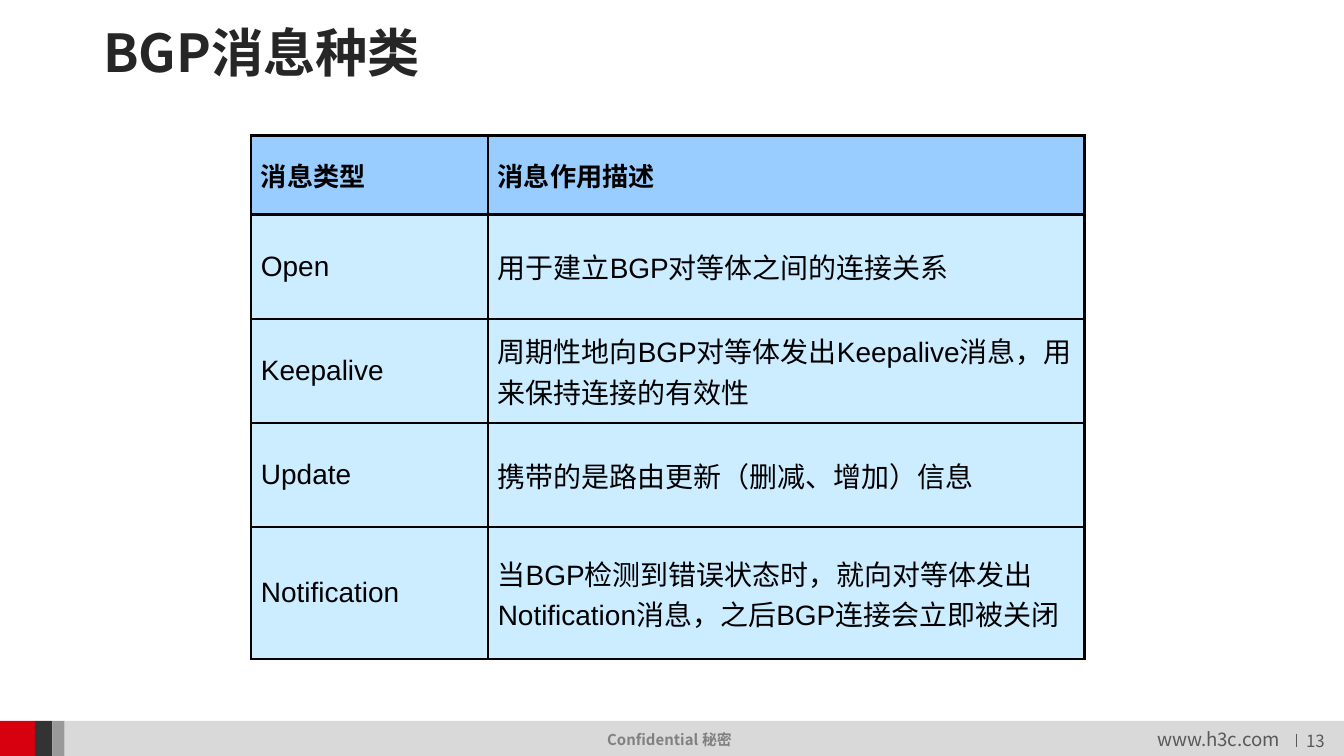
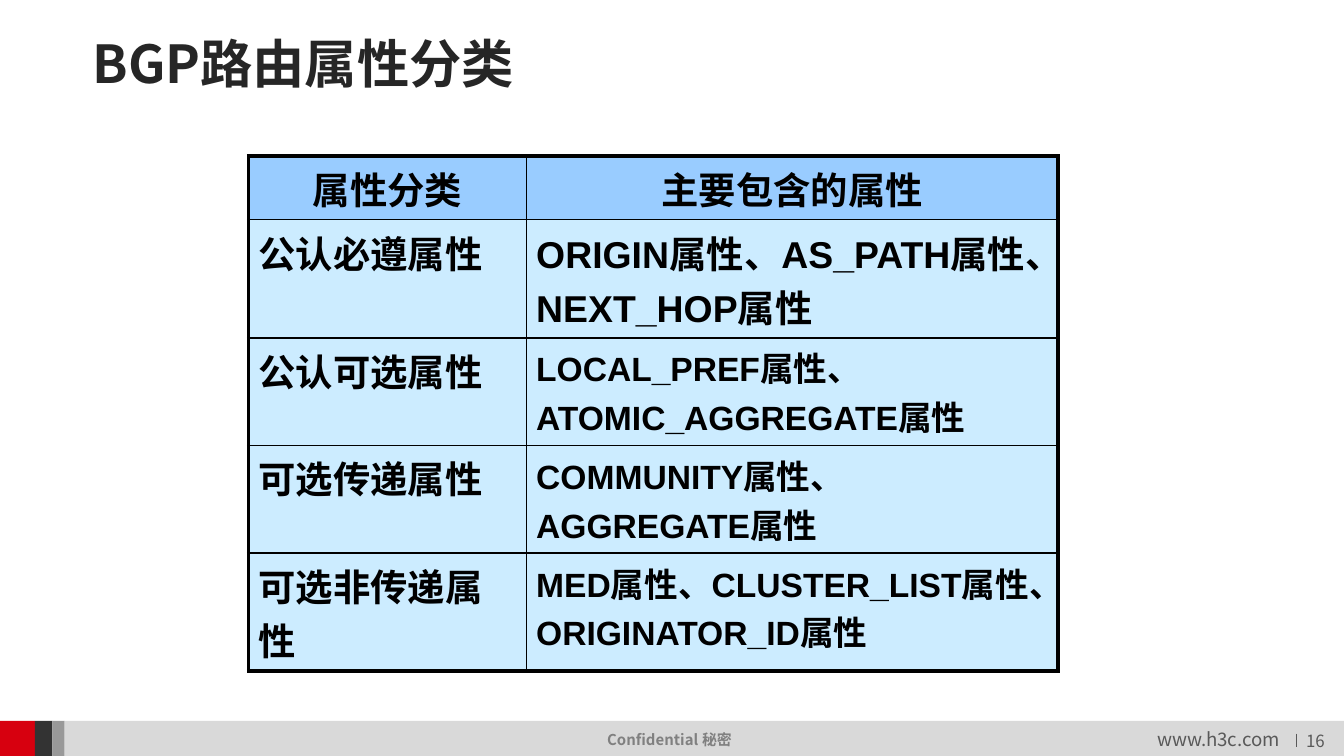
from dataclasses import dataclass

from lxml import etree
from pptx import Presentation
from pptx.dml.color import RGBColor
from pptx.enum.shapes import MSO_CONNECTOR, MSO_SHAPE
from pptx.enum.text import MSO_ANCHOR, MSO_AUTO_SIZE, PP_ALIGN
from pptx.oxml.ns import qn
from pptx.util import Pt

LEFT, CENTER, RIGHT = PP_ALIGN.LEFT, PP_ALIGN.CENTER, PP_ALIGN.RIGHT
TOP, MIDDLE = MSO_ANCHOR.TOP, MSO_ANCHOR.MIDDLE
FIT, FIXED = MSO_AUTO_SIZE.SHAPE_TO_FIT_TEXT, MSO_AUTO_SIZE.NONE
RECT, STRAIGHT = MSO_SHAPE.RECTANGLE, MSO_CONNECTOR.STRAIGHT

CJK_FONT = "Noto Sans CJK SC"
TABLE_FONT = "Arial"
COLORS = {
    "title": "262626", "text": "000000", "footer": "595959", "muted": "808080",
    "red": "D7000F", "dark": "333333", "mid": "999999", "light": "D9D9D9",
    "header": "99CCFF", "body": "CCECFF",
}
SLIDE_W, SLIDE_H = 720, 405
BAND_Y = 386.2


@dataclass
class Band:
    x: float
    right: float
    color: str


@dataclass
class TableSpec:
    x: float
    y: float
    cols: list[float]
    heights: list[float]
    rows: list[tuple[str, str]]
    header_size: float
    sizes: list[tuple[float, float]]  # one pair per body row
    header_align: PP_ALIGN
    body_bold: bool
    anchor: MSO_ANCHOR
    outer: float  # border widths
    inner: float


@dataclass
class Page:
    title: str
    title_x: float
    title_y: float
    number: str
    table: TableSpec


BANDS = [
    Band(0, 18.7, "red"),
    Band(18.7, 28.1, "dark"),
    Band(28.1, 34.6, "mid"),
    Band(34.6, SLIDE_W, "light"),
]

# Row heights leave room for every wrapped line
PAGES = [
    Page("BGP消息种类", 48.2, 9.8, "13", TableSpec(
        x=134.6, y=72.6, cols=[126.9, 319.5],
        heights=[42.4] + [55.8] * 3 + [70.8],
        rows=[
            ("消息类型", "消息作用描述"),
            ("Open", "用于建立BGP对等体之间的连接关系"),
            ("Keepalive", "周期性地向BGP对等体发出Keepalive消息，用来保持连接的有效性"),
            ("Update", "携带的是路由更新（删减、增加）信息"),
            ("Notification", "当BGP检测到错误状态时，就向对等体发出Notification消息，"
                             "之后BGP连接会立即被关闭"),
        ],
        header_size=14, sizes=[(15, 15)] * 4, header_align=LEFT,
        body_bold=False, anchor=MIDDLE, outer=1.5, inner=1.5)),
    Page("BGP路由属性分类", 42.5, 15.3, "16", TableSpec(
        x=133.2, y=83.7, cols=[148.9, 284.8],
        heights=[33.9, 63.4, 57.6, 57.6, 63.4],
        rows=[
            ("属性分类", "主要包含的属性"),
            ("公认必遵属性", "ORIGIN属性、AS_PATH属性、NEXT_HOP属性"),
            ("公认可选属性", "LOCAL_PREF属性、ATOMIC_AGGREGATE属性"),
            ("可选传递属性", "COMMUNITY属性、AGGREGATE属性"),
            ("可选非传递属性", "MED属性、CLUSTER_LIST属性、ORIGINATOR_ID属性"),
        ],
        header_size=20, sizes=[(20, 20)] + [(20, 18)] * 3, header_align=CENTER,
        body_bold=True, anchor=TOP, outer=2.25, inner=1)),
]


def rgb(name: str) -> RGBColor:
    return RGBColor.from_string(COLORS[name])


def write(tf, text: str, *, size: float, color: str, font: str = CJK_FONT,
          bold: bool = False, align: PP_ALIGN = LEFT) -> None:
    """Put one formatted paragraph in a text frame."""
    p = tf.paragraphs[0]
    p.alignment = align
    r = p.add_run()
    r.text = text
    r.font.size, r.font.bold, r.font.name = Pt(size), bold, font
    r.font.color.rgb = rgb(color)
    ea = etree.SubElement(r.font._element, qn("a:ea"))
    ea.set("typeface", CJK_FONT)


def add_label(slide, text: str, x: float, y: float, w: float, h: float, *,
              wrap: bool = False, top: float = 3.6, **fmt) -> None:
    tf = slide.shapes.add_textbox(Pt(x), Pt(y), Pt(w), Pt(h)).text_frame
    tf.word_wrap = wrap
    tf.auto_size = FIXED if wrap else FIT
    tf.vertical_anchor = MIDDLE
    tf.margin_top = Pt(top)
    write(tf, text, **fmt)


def add_footer(slide, number: str) -> None:
    for band in BANDS:
        sp = slide.shapes.add_shape(RECT, Pt(band.x), Pt(BAND_Y),
                                    Pt(band.right - band.x), Pt(SLIDE_H - BAND_Y))
        sp.shadow.inherit = False
        sp.fill.solid()
        sp.fill.fore_color.rgb = rgb(band.color)
        sp.line.fill.background()
    add_label(slide, "www.h3c.com", 612.9, 386.3, 81.4, 19.4, size=10, color="footer")
    add_label(slide, "Confidential 秘密", 318.2, 387.7, 83.5, 17,
              size=8, color="muted", bold=True)
    add_label(slide, number, 685.8, 387, 31, 17.3, wrap=True, top=5.8,
              size=9, color="footer", align=RIGHT)
    # Divider before the page number
    line = slide.shapes.add_connector(STRAIGHT, Pt(694.6), Pt(393.1), Pt(694.6), Pt(400.3))
    line.line.color.rgb = rgb("footer")
    line.line.width = Pt(0.75)
    etree.SubElement(line._element.spPr, qn("a:effectLst"))


def set_border(cell, side: str, width: float) -> None:
    ln = etree.SubElement(cell._tc.get_or_add_tcPr(), qn(f"a:ln{side}"), w=str(Pt(width)))
    fill = etree.SubElement(ln, qn("a:solidFill"))
    etree.SubElement(fill, qn("a:srgbClr"), val=COLORS["text"])


def add_grid(slide, t: TableSpec) -> None:
    n_rows, n_cols = len(t.rows), len(t.cols)
    table = slide.shapes.add_table(n_rows, n_cols, Pt(t.x), Pt(t.y),
                                   Pt(sum(t.cols)), Pt(sum(t.heights))).table
    table.horz_banding = False
    for col, width in zip(table.columns, t.cols):
        col.width = Pt(width)
    for i, (height, texts) in enumerate(zip(t.heights, t.rows)):
        table.rows[i].height = Pt(height)
        header = i == 0
        for j, text in enumerate(texts):
            cell = table.cell(i, j)
            edges = {"L": j == 0, "R": j == n_cols - 1, "T": header, "B": i == n_rows - 1}
            for side, is_outer in edges.items():
                set_border(cell, side, t.outer if is_outer else t.inner)
            cell.fill.solid()
            cell.fill.fore_color.rgb = rgb("header" if header else "body")
            cell.vertical_anchor = t.anchor
            cell.margin_left = cell.margin_right = Pt(5.2)
            cell.margin_top = cell.margin_bottom = Pt(2.8)
            write(cell.text_frame, text, color="text", font=TABLE_FONT,
                  size=t.header_size if header else t.sizes[i - 1][j],
                  bold=header or t.body_bold,
                  align=t.header_align if header else LEFT)


def add_page(prs, page: Page) -> None:
    slide = prs.slides.add_slide(prs.slide_layouts[5])  # Title Only
    add_footer(slide, page.number)
    title = slide.shapes.title
    title.left, title.top = Pt(page.title_x), Pt(page.title_y)
    title.width, title.height = Pt(570), Pt(36)
    tf = title.text_frame
    tf.word_wrap, tf.auto_size, tf.vertical_anchor = True, FIXED, MIDDLE
    write(tf, page.title, size=28, color="title", bold=True)
    add_grid(slide, page.table)


def main() -> None:
    prs = Presentation()
    prs.slide_width, prs.slide_height = Pt(SLIDE_W), Pt(SLIDE_H)
    for page in PAGES:
        add_page(prs, page)
    prs.save("out.pptx")


if __name__ == "__main__":
    main()
